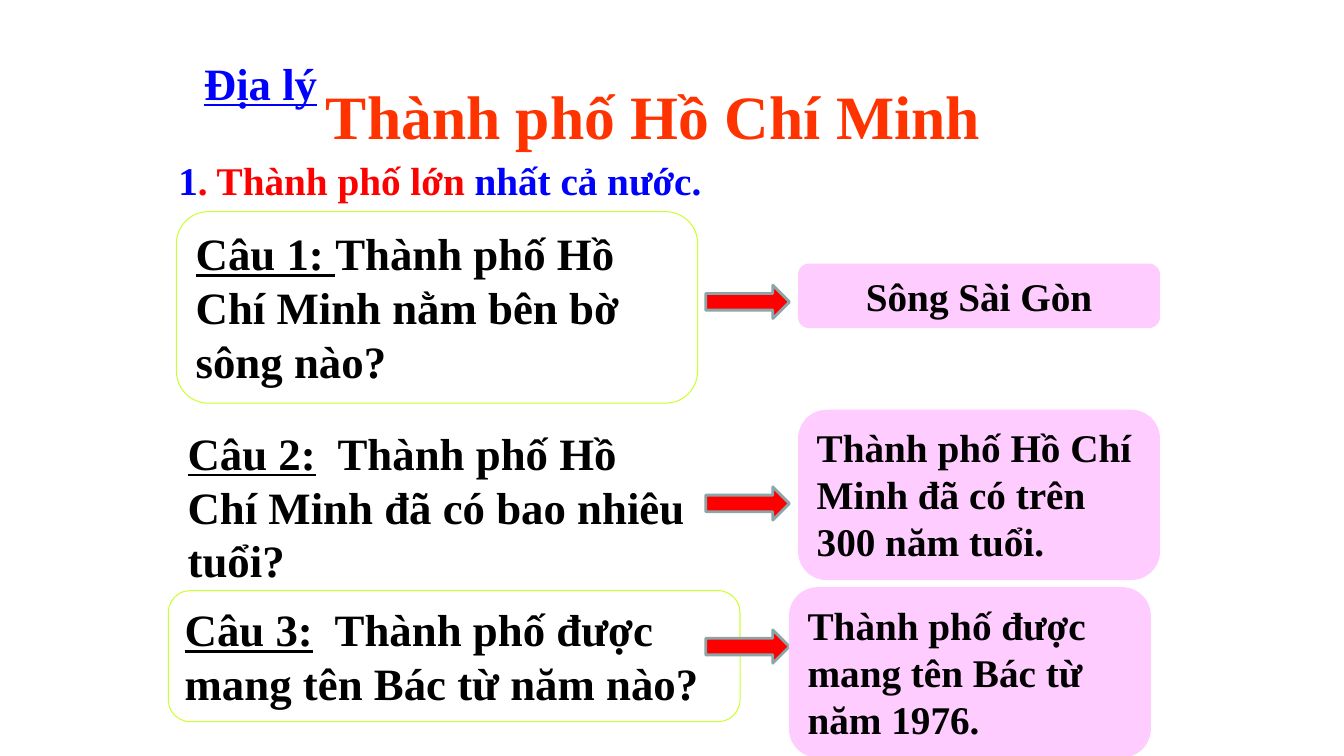
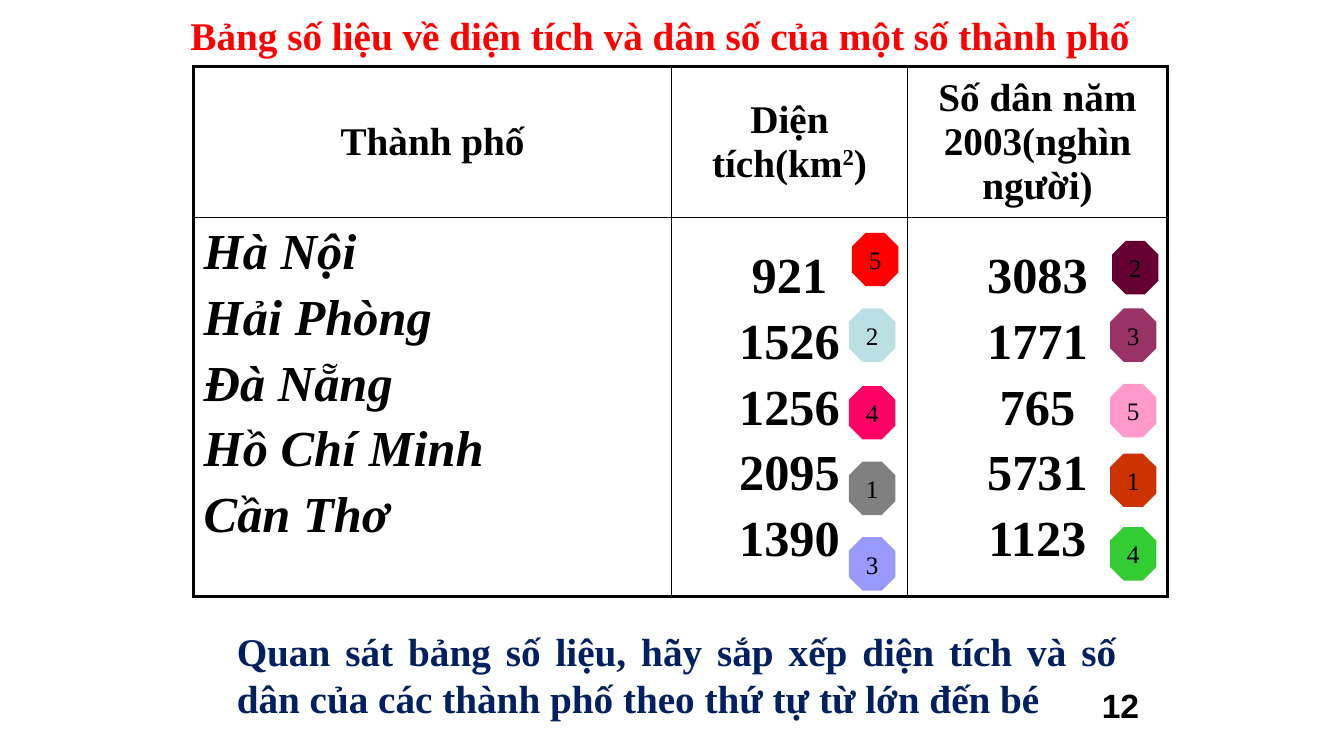
from dataclasses import dataclass
from typing import Optional

from lxml.etree import SubElement
from pptx import Presentation
from pptx.dml.color import RGBColor
from pptx.enum.shapes import MSO_SHAPE
from pptx.enum.text import MSO_ANCHOR, MSO_AUTO_SIZE, PP_ALIGN
from pptx.oxml.ns import qn
from pptx.util import Emu, Pt

EMU_PER_PX = 9144  # 100 px to the inch
SERIF = "Times New Roman"
BLACK, WHITE, RED, BLUE = "000000", "FFFFFF", "FF0000", "0000FF"
LIME, PINK, ARROW_LINE, NAVY = "CCFF33", "FFCCFF", "8AA6A8", "002060"
LEFT, CENTER, JUSTIFY = PP_ALIGN.LEFT, PP_ALIGN.CENTER, PP_ALIGN.JUSTIFY


@dataclass(frozen=True)
class Box:
    left: int
    top: int
    width: int
    height: int


@dataclass(frozen=True)
class Style:
    size: int
    color: str = BLACK
    align: PP_ALIGN = LEFT
    bold: bool = True
    italic: bool = False
    font: str = SERIF
    line_pitch: Optional[float] = None
    space_before: float = 0


@dataclass(frozen=True)
class Piece:
    text: str
    color: Optional[str] = None
    underline: Optional[bool] = None
    bold: Optional[bool] = None
    baseline: Optional[int] = None


@dataclass(frozen=True)
class Question:
    box: Box
    outline: str
    pieces: list[Piece]
    arrow_top: int
    answer_box: Box
    answer: str
    answer_align: PP_ALIGN = LEFT


@dataclass(frozen=True)
class Badge:
    left: int
    top: int
    rank: str
    color: str


QUESTIONS = [
    Question(Box(175, 210, 517, 190), LIME,
             [Piece("Câu 1: ", underline=True),
              Piece("Thành phố Hồ Chí Minh nằm bên bờ sông nào?")],
             283, Box(792, 262, 358, 63), "Sông Sài Gòn", CENTER),
    Question(Box(167, 408, 533, 190), WHITE,
             [Piece("Câu 2:", underline=True), Piece(" ", bold=False),
              Piece(" Thành phố Hồ Chí Minh đã có bao nhiêu tuổi?")],
             483, Box(792, 407, 358, 168),
             "Thành phố Hồ Chí Minh đã có trên 300 năm tuổi."),
    Question(Box(167, 586, 567, 130), LIME,
             [Piece("Câu 3:", underline=True), Piece(" ", bold=False),
              Piece(" Thành phố được mang tên Bác từ năm nào?")],
             625, Box(783, 583, 358, 168),
             "Thành phố được mang tên Bác từ năm 1976."),
]

HEADERS = [
    [Piece("Thành phố")],
    [Piece("Diện tích(km"), Piece("2", baseline=30000), Piece(")")],
    [Piece("Số dân năm 2003(nghìn người)")],
]
CITIES = [
    ("Hà Nội", "921", "3083"),
    ("Hải Phòng", "1526", "1771"),
    ("Đà Nẵng", "1256", "765"),
    ("Hồ Chí Minh", "2095", "5731"),
    ("Cần Thơ", "1390", "1123"),
]
BADGES = [
    Badge(845, 231, "5", RED), Badge(842, 306, "2", "BBE0E3"),
    Badge(842, 383, "4", "FF0066"), Badge(842, 458, "1", "808080"),
    Badge(842, 533, "3", "9999FF"),
    Badge(1103, 239, "2", "660033"), Badge(1101, 306, "3", "993366"),
    Badge(1101, 381, "5", "FF99CC"), Badge(1101, 450, "1", "CC3300"),
    Badge(1101, 523, "4", "33CC33"),
]


def px(length: int) -> Emu:
    return Emu(length * EMU_PER_PX)


def rgb(color: str) -> RGBColor:
    return RGBColor.from_string(color)


def place(box: Box) -> tuple[Emu, Emu, Emu, Emu]:
    return px(box.left), px(box.top), px(box.width), px(box.height)


# Text
def write(frame, paragraphs: list[list[Piece]], style: Style) -> None:
    for index, pieces in enumerate(paragraphs):
        paragraph = frame.paragraphs[0] if index == 0 else frame.add_paragraph()
        paragraph.alignment = style.align
        paragraph.line_spacing = Pt(style.line_pitch or style.size * 1.2)
        paragraph.space_before = Pt(style.space_before if index else 0)
        font = paragraph.font
        font.name, font.size = style.font, Pt(style.size)
        font.bold, font.italic = style.bold, style.italic
        font.color.rgb = rgb(style.color)
        for piece in pieces:
            run = paragraph.add_run()
            run.text = piece.text
            if piece.color:
                run.font.color.rgb = rgb(piece.color)
            if piece.underline is not None:
                run.font.underline = piece.underline
            if piece.bold is not None:
                run.font.bold = piece.bold
            if piece.baseline:
                run._r.get_or_add_rPr().set("baseline", str(piece.baseline))


def add_text(slide, box: Box, pieces: list[Piece], style: Style) -> None:
    frame = slide.shapes.add_textbox(*place(box)).text_frame
    frame.word_wrap = True
    write(frame, [pieces], style)


def set_title(slide, box: Box, text: str, style: Style, anchor: MSO_ANCHOR) -> None:
    title = slide.shapes.title
    title.left, title.top, title.width, title.height = place(box)
    frame = title.text_frame
    frame.auto_size = MSO_AUTO_SIZE.NONE
    frame.vertical_anchor = anchor
    write(frame, [[Piece(text)]], style)


# Shapes
def add_shape(slide, kind: MSO_SHAPE, box: Box, fill: str,
              line: Optional[str] = None, line_width: float = 0.75):
    shape = slide.shapes.add_shape(kind, *place(box))
    shape.shadow.inherit = False
    shape.fill.solid()
    shape.fill.fore_color.rgb = rgb(fill)
    if line:
        shape.line.color.rgb = rgb(line)
        shape.line.width = Pt(line_width)
    else:
        shape.line.fill.background()
    return shape


def add_panel(slide, box: Box, fill: str, line: str,
              pieces: list[Piece], style: Style) -> None:
    panel = add_shape(slide, MSO_SHAPE.ROUNDED_RECTANGLE, box, fill, line)
    panel.text_frame.vertical_anchor = MSO_ANCHOR.TOP
    write(panel.text_frame, [pieces], style)


def add_badge(slide, badge: Badge) -> None:
    octagon = add_shape(slide, MSO_SHAPE.OCTAGON,
                        Box(badge.left, badge.top, 46, 53), badge.color)
    octagon.text_frame.word_wrap = False
    octagon.text_frame.vertical_anchor = MSO_ANCHOR.MIDDLE
    write(octagon.text_frame, [[Piece(badge.rank)]],
          Style(18, align=CENTER, bold=False))


# Table
def set_borders(cell, widths: dict[str, float]) -> None:
    properties = cell._tc.get_or_add_tcPr()
    for side, width in widths.items():
        line = SubElement(properties, qn(f"a:ln{side}"), w=str(Pt(width)))
        fill = SubElement(line, qn("a:solidFill"))
        SubElement(fill, qn("a:srgbClr"), val=BLACK)


def add_city_table(slide) -> None:
    table = slide.shapes.add_table(2, 3, *place(Box(192, 66, 966, 526))).table
    for column, width in zip(table.columns, (474, 234, 258)):
        column.width = px(width)
    for row, height in zip(table.rows, (150, 376)):
        row.height = px(height)
    header = Style(28, align=CENTER, line_pitch=31.2)
    names = Style(36, italic=True, line_pitch=41.2, space_before=5.8)
    numbers = Style(36, align=CENTER, line_pitch=41.2, space_before=5.8)
    city_columns = [[[Piece(value)] for value in values] for values in zip(*CITIES)]
    outer, inner = 2.25, 1
    for row in range(2):
        for column in range(3):
            cell = table.cell(row, column)
            set_borders(cell, {
                "L": outer if column == 0 else inner,
                "R": outer if column == 2 else inner,
                "T": outer if row == 0 else inner,
                "B": outer if row == 1 else inner,
            })
            cell.fill.solid()
            cell.fill.fore_color.rgb = rgb(WHITE)
            is_names = row == 1 and column == 0
            cell.vertical_anchor = MSO_ANCHOR.TOP if is_names else MSO_ANCHOR.MIDDLE
            if row == 0:
                write(cell.text_frame, [HEADERS[column]], header)
            else:
                write(cell.text_frame, city_columns[column],
                      names if is_names else numbers)


# Slides
def build_questions(slide) -> None:
    set_title(slide, Box(188, 72, 920, 84), "Thành phố Hồ Chí Minh",
              Style(44, "FF3300", CENTER), MSO_ANCHOR.TOP)
    add_text(slide, Box(167, 50, 183, 64), [Piece("Địa lý", underline=True)],
             Style(32, BLUE, CENTER))
    add_text(slide, Box(167, 150, 1000, 57),
             [Piece("1"), Piece(". Thành phố lớn ", RED), Piece("nhất cả nước.")],
             Style(28, BLUE))
    for question in QUESTIONS:
        add_panel(slide, question.box, WHITE, question.outline,
                  question.pieces, Style(32))
        add_shape(slide, MSO_SHAPE.RIGHT_ARROW,
                  Box(700, question.arrow_top, 83, 33), RED, ARROW_LINE, 2)
        add_panel(slide, question.answer_box, PINK, PINK, [Piece(question.answer)],
                  Style(28, align=question.answer_align))


def build_city_figures(slide) -> None:
    set_title(slide, Box(167, -17, 975, 103),
              "Bảng số liệu về diện tích và dân số của một số thành phố",
              Style(28, RED, CENTER), MSO_ANCHOR.MIDDLE)
    add_city_table(slide)
    for badge in BADGES:
        add_badge(slide, badge)
    add_text(slide, Box(225, 617, 892, 104),
             [Piece("Quan sát bảng số liệu, hãy sắp xếp diện tích và số dân "
                    "của các thành phố theo thứ tự từ lớn đến bé")],
             Style(28, NAVY, JUSTIFY))
    add_text(slide, Box(1083, 675, 67, 50), [Piece("12")], Style(24, font="Arial"))


def main() -> None:
    presentation = Presentation()
    presentation.slide_width, presentation.slide_height = px(1333), px(750)
    title_only = presentation.slide_layouts[5]
    for build in (build_questions, build_city_figures):
        build(presentation.slides.add_slide(title_only))
    presentation.save("out.pptx")


if __name__ == "__main__":
    main()
